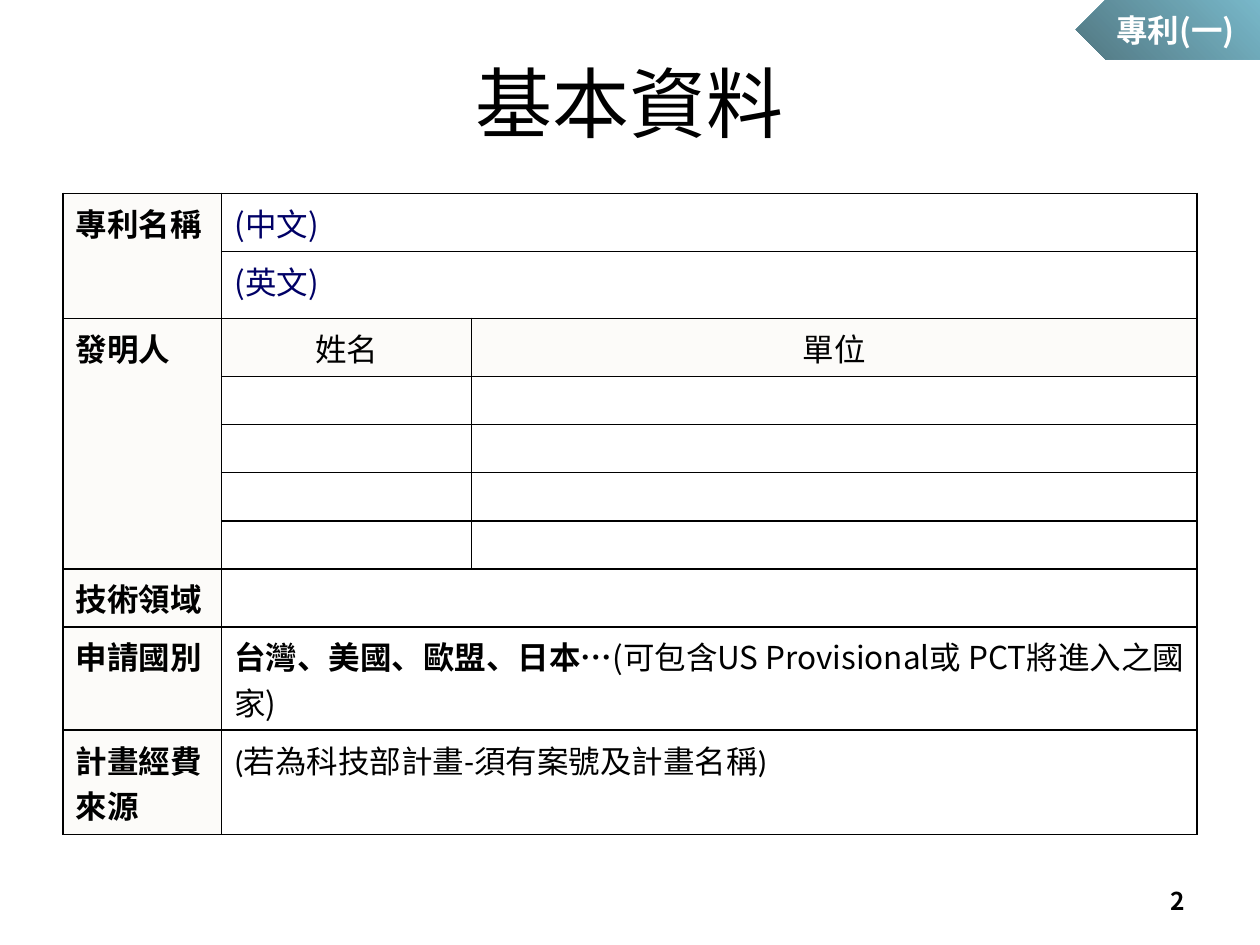
from dataclasses import dataclass

from lxml.etree import SubElement
from pptx import Presentation
from pptx.dml.color import RGBColor
from pptx.enum.shapes import MSO_SHAPE
from pptx.enum.text import MSO_ANCHOR, PP_ALIGN
from pptx.oxml.ns import qn
from pptx.util import Cm, Pt

BLACK = RGBColor(0, 0, 0)
WHITE = RGBColor(0xFF, 0xFF, 0xFF)
NAVY = RGBColor(0, 0, 0x66)
LABEL_FILL = RGBColor(0xFC, 0xFB, 0xF9)
TAG_LIGHT = RGBColor(0x57, 0xA7, 0xBD)
TAG_DARK = RGBColor(0x27, 0x56, 0x63)
CJK_FONT = "Noto Sans CJK SC"
LATIN_FONT = "Calibri"

COLUMN_WIDTHS = (3.2, 5.03, 14.63)
ROW_HEIGHTS = (1.17, 1.35, 1.17, 0.97, 0.97, 0.97, 0.97, 1.17, 2.08, 2.1)


@dataclass(frozen=True)
class Entry:
    """Table text at a row and column, spanning rows and columns."""
    row: int
    col: int
    text: str = ""
    rows: int = 1
    cols: int = 1
    bold: bool = False
    shaded: bool = False
    centred: bool = False
    color: RGBColor = BLACK
    font: str = CJK_FONT
    plain_tail: str = ""


def label(row: int, text: str, rows: int = 1) -> Entry:
    return Entry(row, 0, text, rows, bold=True, shaded=True)


def heading(col: int, text: str) -> Entry:
    return Entry(2, col, text, shaded=True, centred=True)


ENTRIES = (
    label(0, "專利名稱", rows=2),
    Entry(0, 1, "(中文)", cols=2, color=NAVY),
    Entry(1, 1, "(英文)", cols=2, color=NAVY),
    label(2, "發明人", rows=5),
    heading(1, "姓名"),
    heading(2, "單位"),
    label(7, "技術領域"),
    Entry(7, 1, cols=2),
    label(8, "申請國別"),
    Entry(8, 1, "台灣、美國、歐盟、日本…", cols=2, bold=True,
          plain_tail="(可包含US Provisional或 PCT將進入之國家)"),
    label(9, "計畫經費來源"),
    Entry(9, 1, "(若為科技部計畫-須有案號及計畫名稱)", cols=2, font=LATIN_FONT),
)


def format_run(run, size: float, color: RGBColor, bold: bool = False, font: str = CJK_FONT) -> None:
    run.font.size = Pt(size)
    run.font.bold = bold
    run.font.color.rgb = color
    run.font.name = font
    SubElement(run.font._element, qn("a:ea")).set("typeface", CJK_FONT)


def add_borders(cell) -> None:
    properties = cell._tc.get_or_add_tcPr()
    for side in ("lnL", "lnR", "lnT", "lnB"):
        line = SubElement(properties, qn(f"a:{side}"), w=str(Pt(1)))
        fill = SubElement(line, qn("a:solidFill"))
        SubElement(fill, qn("a:srgbClr"), val=str(BLACK))


def fill_entry(table, entry: Entry) -> None:
    cell = table.cell(entry.row, entry.col)
    if entry.rows > 1 or entry.cols > 1:
        cell.merge(table.cell(entry.row + entry.rows - 1, entry.col + entry.cols - 1))
    if entry.shaded:
        cell.fill.solid()
        cell.fill.fore_color.rgb = LABEL_FILL
    if not entry.text:
        return
    cell.text_frame.text = entry.text
    paragraph = cell.text_frame.paragraphs[0]
    paragraph.alignment = PP_ALIGN.CENTER if entry.centred else PP_ALIGN.LEFT
    format_run(paragraph.runs[0], 18, entry.color, entry.bold, entry.font)
    if entry.plain_tail:
        tail = paragraph.add_run()
        tail.text = entry.plain_tail
        format_run(tail, 18, entry.color)


def add_patent_table(slide) -> None:
    table = slide.shapes.add_table(
        len(ROW_HEIGHTS), len(COLUMN_WIDTHS), Cm(1.27), Cm(3.9),
        Cm(sum(COLUMN_WIDTHS)), Cm(sum(ROW_HEIGHTS))).table
    table.first_row = False
    table.horz_banding = False
    for column, width in zip(table.columns, COLUMN_WIDTHS):
        column.width = Cm(width)
    for row, height in zip(table.rows, ROW_HEIGHTS):
        row.height = Cm(height)
    for cell in table.iter_cells():
        add_borders(cell)
        cell.fill.background()
        # Small end marks keep empty rows at their set height
        SubElement(cell.text_frame.paragraphs[0]._p, qn("a:endParaRPr"), sz="1200")
    for entry in ENTRIES:
        fill_entry(table, entry)


def add_title(slide) -> None:
    title = slide.shapes.title
    title.left, title.top, title.width, title.height = Cm(1.27), Cm(0.76), Cm(22.86), Cm(2.57)
    title.text_frame.text = "基本資料"
    title.text_frame.vertical_anchor = MSO_ANCHOR.MIDDLE
    paragraph = title.text_frame.paragraphs[0]
    paragraph.alignment = PP_ALIGN.CENTER
    format_run(paragraph.runs[0], 44, BLACK, font=LATIN_FONT)


def add_section_tag(slide) -> None:
    tag = slide.shapes.add_shape(MSO_SHAPE.PENTAGON, Cm(21.69), Cm(0), Cm(3.71), Cm(1.2))
    tag.shadow.inherit = False
    tag.line.fill.background()
    tag._element.spPr.find(qn("a:xfrm")).set("flipH", "1")
    tag.fill.gradient()
    tag.fill.gradient_angle = 315
    for stop, color in zip(tag.fill.gradient_stops, (TAG_LIGHT, TAG_DARK)):
        stop.color.rgb = color
    for color_element in tag._element.spPr.iter(qn("a:srgbClr")):
        SubElement(color_element, qn("a:alpha"), val="80000")
    frame = tag.text_frame
    frame.text = "專利(一)"
    frame.word_wrap = False
    frame.vertical_anchor = MSO_ANCHOR.MIDDLE
    frame.paragraphs[0].alignment = PP_ALIGN.CENTER
    format_run(frame.paragraphs[0].runs[0], 18, WHITE, bold=True)


def add_page_number(slide) -> None:
    frame = slide.shapes.add_textbox(Cm(18.2), Cm(17.66), Cm(5.93), Cm(1.01)).text_frame
    frame.text = "2"
    frame.word_wrap = True
    frame.vertical_anchor = MSO_ANCHOR.MIDDLE
    frame.paragraphs[0].alignment = PP_ALIGN.RIGHT
    format_run(frame.paragraphs[0].runs[0], 14, BLACK, bold=True)


def main() -> None:
    presentation = Presentation()
    presentation.slide_width, presentation.slide_height = Cm(25.4), Cm(19.05)
    slide = presentation.slides.add_slide(presentation.slide_layouts[5])
    add_page_number(slide)
    add_title(slide)
    add_patent_table(slide)
    add_section_tag(slide)
    presentation.save("out.pptx")


if __name__ == "__main__":
    main()
